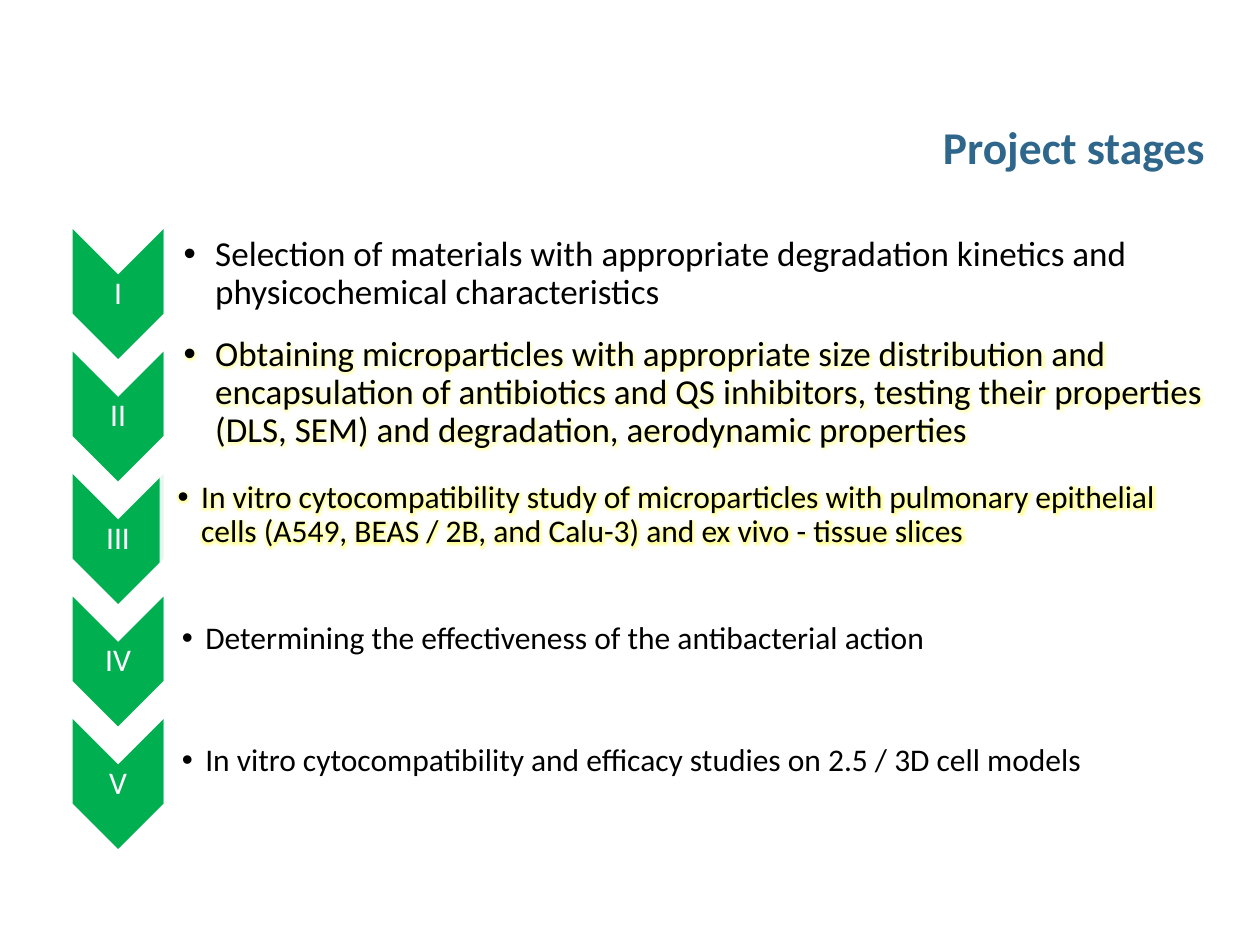
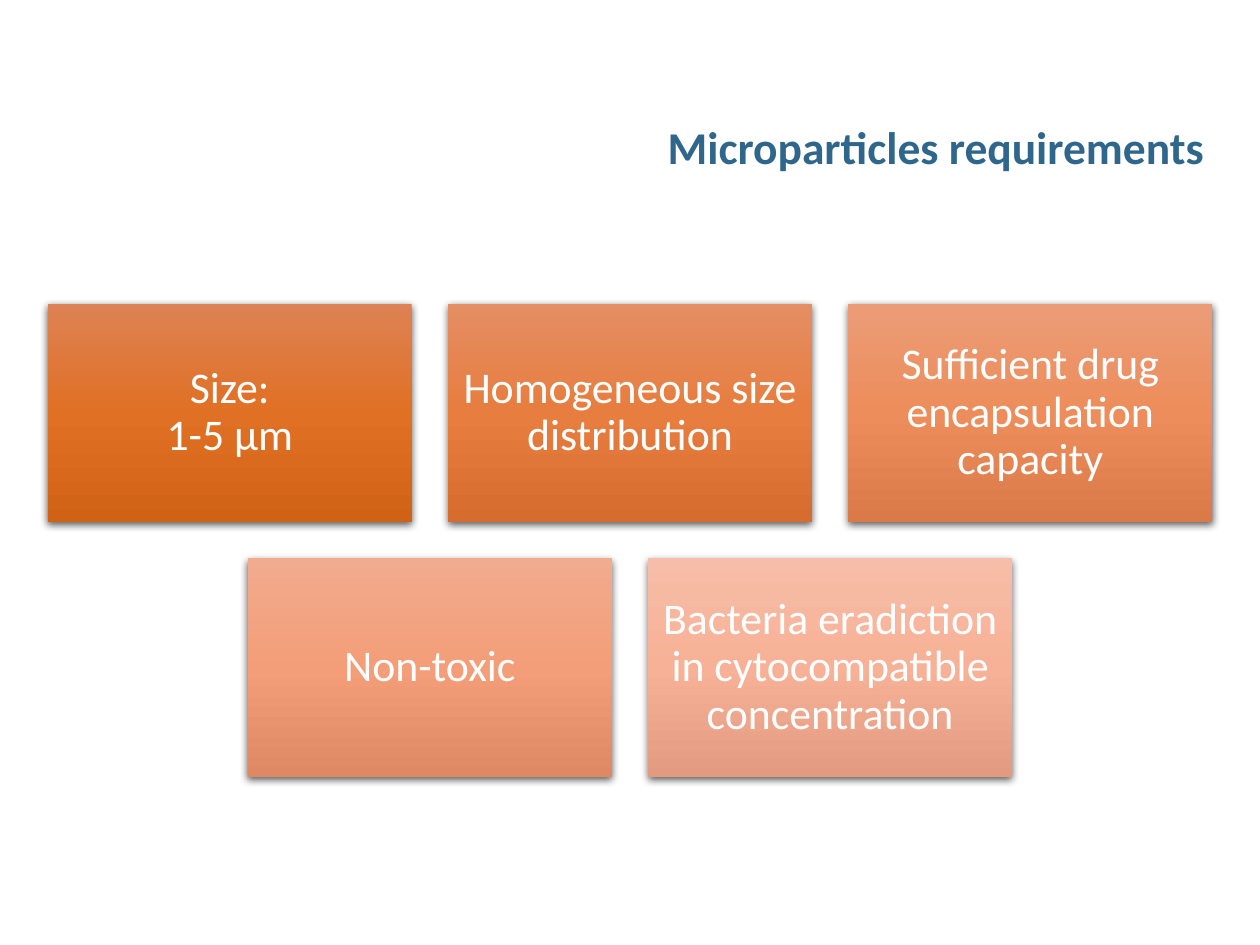
from copy import deepcopy

from lxml.etree import SubElement
from pptx import Presentation
from pptx.dml.color import RGBColor
from pptx.enum.shapes import MSO_SHAPE
from pptx.enum.text import MSO_ANCHOR, PP_ALIGN
from pptx.oxml.ns import qn
from pptx.util import Pt

WHITE = RGBColor(0xFF, 0xFF, 0xFF)
BLACK = RGBColor(0x00, 0x00, 0x00)
TITLE_BLUE = RGBColor(0x2F, 0x67, 0x8C)
STAGE_GREEN = RGBColor(0x00, 0xB0, 0x50)
GLOW_YELLOW = RGBColor(0xFF, 0xFF, 0x00)
FONT = "Calibri"


def write_text(shape, text, size, color, align, margins):
    """Fill a shape with one centred-vertically paragraph; margins are left and other sides."""
    frame = shape.text_frame
    frame.word_wrap = True
    frame.vertical_anchor = MSO_ANCHOR.MIDDLE
    frame.margin_left = Pt(margins[0])
    frame.margin_top = frame.margin_right = frame.margin_bottom = Pt(margins[1])
    frame.text = text
    para = frame.paragraphs[0]
    para.alignment = align
    para.line_spacing = 0.9
    for span in para.runs:
        span.font.name = FONT
        span.font.size = Pt(size)
        span.font.color.rgb = color
    return para


def add_effect(parent, kind, color, opacity, **settings):
    """Add a glow or shadow with its colour and opacity in percent."""
    effect = SubElement(parent, qn(f"a:{kind}"), {k: str(v) for k, v in settings.items()})
    tint = SubElement(effect, qn("a:srgbClr"), val=str(color))
    SubElement(tint, qn("a:alpha"), val=str(opacity * 1000))


deck = Presentation()
deck.slide_width, deck.slide_height = Pt(720), Pt(540)

pages = []
for title in ("Project stages", "Microparticles requirements"):
    page = deck.slides.add_slide(deck.slide_layouts[6])
    box = page.shapes.add_textbox(Pt(228.2), Pt(40.3), Pt(467.3), Pt(90))
    para = write_text(box, title, 26, TITLE_BLUE, PP_ALIGN.RIGHT, (7.2, 3.6))
    para.runs[0].font.bold = True
    box.text_frame.margin_right = Pt(7.2)
    pages.append(page)
stages_page, requirements_page = pages

# Project stages: numeral, text, size, panel left, panel centre, panel height, highlighted
STAGES = [
    ("I", "Selection of materials with appropriate degradation kinetics and "
     "physicochemical characteristics", 20, 93.6, 156.6, 48.2, False),
    ("II", "Obtaining microparticles with appropriate size distribution and "
     "encapsulation of antibiotics and QS inhibitors, testing their properties "
     "(DLS, SEM) and degradation, aerodynamic properties", 20, 93.6, 224.8, 57.6, True),
    ("III", "In vitro cytocompatibility study of microparticles with pulmonary epithelial "
     "cells (A549, BEAS / 2B, and Calu-3) and ex vivo - tissue slices",
     18, 91.2, 294.4, 57.6, True),
    ("IV", "Determining the effectiveness of the antibacterial action",
     18, 93.6, 365.2, 57.6, False),
    ("V", "In vitro cytocompatibility and efficacy studies on 2.5 / 3D cell models",
     18, 93.6, 435.2, 57.6, False),
]
CHEVRON_LENGTH, CHEVRON_WIDTH = 74.2, 52
CHEVRON_CENTER, FIRST_CHEVRON, STAGE_PITCH = 67.5, 168, 70
PANEL_WIDTH = 600

shapes = stages_page.shapes
for index, (numeral, text, size, left, center, height, highlighted) in enumerate(STAGES):
    chevron_middle = FIRST_CHEVRON + index * STAGE_PITCH
    chevron = shapes.add_shape(
        MSO_SHAPE.CHEVRON,
        Pt(CHEVRON_CENTER - CHEVRON_LENGTH / 2), Pt(chevron_middle - CHEVRON_WIDTH / 2),
        Pt(CHEVRON_LENGTH), Pt(CHEVRON_WIDTH))
    panel = shapes.add_shape(
        MSO_SHAPE.ROUND_2_SAME_RECTANGLE,
        Pt(left + PANEL_WIDTH / 2 - height / 2), Pt(center - PANEL_WIDTH / 2),
        Pt(height), Pt(PANEL_WIDTH))
    for shape, color in ((chevron, STAGE_GREEN), (panel, WHITE)):
        shape.rotation = 90
        shape.shadow.inherit = False
        shape.fill.solid()
        shape.fill.fore_color.rgb = color
        shape.line.fill.background()
    panel_color = panel.fill._xPr.find(qn("a:solidFill"))[0]
    SubElement(panel_color, qn("a:alpha"), val="90000")

    label = shapes.add_textbox(Pt(CHEVRON_CENTER - CHEVRON_WIDTH / 2),
                               Pt(chevron_middle - 11), Pt(CHEVRON_WIDTH), Pt(22))
    write_text(label, numeral, 18, WHITE, PP_ALIGN.CENTER, (0.8, 0.8))

    indent = 18 if size == 20 else 13.5
    box = shapes.add_textbox(Pt(left), Pt(center - height / 2 + 2), Pt(597), Pt(height - 4))
    para = write_text(box, text, size, BLACK, PP_ALIGN.LEFT, (size * 0.57, 0.8))
    properties = para._p.get_or_add_pPr()
    properties.set("marL", str(Pt(indent)))
    properties.set("indent", str(-Pt(indent)))
    SubElement(properties, qn("a:buFont"), typeface="Arial")
    SubElement(properties, qn("a:buChar"), char="•")
    if highlighted:
        run_properties = para.runs[0].font._element
        effects = SubElement(run_properties, qn("a:effectLst"))
        run_properties.find(qn("a:solidFill")).addnext(effects)
        add_effect(effects, "glow", GLOW_YELLOW, 40, rad=Pt(5))

# Microparticles requirements: text and the gradient from top to bottom
REQUIREMENT_ROWS = [
    [("Size:\v1-5 µm", ("DD8254", "E07024", "D06216")),
     ("Homogeneous size distribution", ("E48E63", "E77D3F", "D66D2F")),
     ("Sufficient drug encapsulation capacity", ("EB9C77", "ED8D5B", "DB7A49"))],
    [("Non-toxic", ("F1AB8E", "F39E78", "DF8964")),
     ("Bacteria eradiction in cytocompatible concentration", ("F6BDA8", "F7B196", "E29A80"))],
]
TILE_WIDTH, TILE_HEIGHT, TILE_GAP, TILES_TOP = 208, 124.8, 20.7, 173.6

for row, tiles in enumerate(REQUIREMENT_ROWS):
    row_width = len(tiles) * (TILE_WIDTH + TILE_GAP) - TILE_GAP
    for column, (text, colors) in enumerate(tiles):
        tile = requirements_page.shapes.add_shape(
            MSO_SHAPE.RECTANGLE,
            Pt((720 - row_width) / 2 + column * (TILE_WIDTH + TILE_GAP)),
            Pt(TILES_TOP + row * (TILE_HEIGHT + TILE_GAP)),
            Pt(TILE_WIDTH), Pt(TILE_HEIGHT))
        tile.line.fill.background()
        tile.fill.gradient()
        tile.fill.gradient_angle = 270
        properties = tile._element.spPr
        stop_list = properties.find(qn("a:gradFill")).find(qn("a:gsLst"))
        stop_list.append(deepcopy(stop_list[0]))
        for stop, position, color in zip(tile.fill.gradient_stops, (0, 0.5, 1), colors):
            stop.position = position
            stop.color.rgb = RGBColor.from_string(color)
        tile.shadow.inherit = False
        add_effect(properties.find(qn("a:effectLst")), "outerShdw", BLACK, 63,
                   blurRad=Pt(4.5), dist=Pt(1.5), dir=5400000, algn="ctr", rotWithShape=0)
        write_text(tile, text, 25, WHITE, PP_ALIGN.CENTER, (7.2, 7.2))

deck.save("out.pptx")
